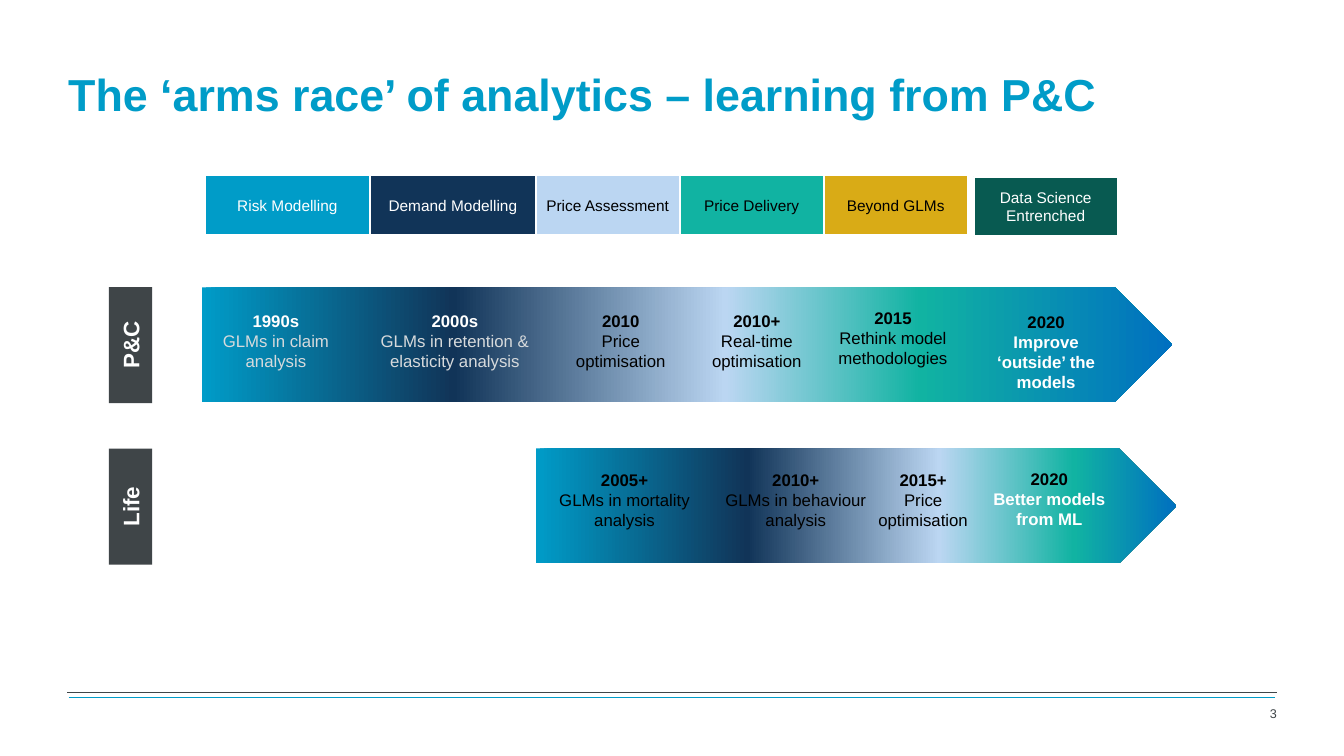
from dataclasses import dataclass

import pptx
import pptx.util
import pptx.dml.color
import pptx.enum.shapes
import pptx.enum.text
import pptx.oxml
import pptx.oxml.ns
from lxml import etree

Cm = pptx.util.Cm
Pt = pptx.util.Pt
RGBColor = pptx.dml.color.RGBColor
Shape = pptx.enum.shapes.MSO_SHAPE
Align = pptx.enum.text.PP_ALIGN
Anchor = pptx.enum.text.MSO_ANCHOR
qn = pptx.oxml.ns.qn

CYAN = RGBColor(0x00, 0x9C, 0xC8)
NAVY = RGBColor(0x11, 0x34, 0x58)
PALE = RGBColor(0xBB, 0xD6, 0xF2)
TEAL = RGBColor(0x11, 0xB3, 0xA2)
GOLD = RGBColor(0xD9, 0xAB, 0x16)
FOREST = RGBColor(0x08, 0x5A, 0x51)
BLUE = RGBColor(0x00, 0x70, 0xC0)
SLATE = RGBColor(0x3F, 0x45, 0x48)
SILVER = RGBColor(0xD7, 0xDA, 0xDC)
WHITE = RGBColor(0xFF, 0xFF, 0xFF)
BLACK = RGBColor(0x00, 0x00, 0x00)

ARROW_COLORS = (CYAN, NAVY, PALE, TEAL, BLUE)
FONT = "Arial"


@dataclass
class Stage:
    text: str
    width: float
    fill: RGBColor
    color: RGBColor
    gap: float = 0
    drop: float = 0


@dataclass
class Milestone:
    year: str
    text: str
    left: float
    top: float
    width: float = 3.91
    year_color: RGBColor = BLACK
    color: RGBColor = BLACK
    bold: bool = False


@dataclass
class Track:
    label: str
    label_top: float
    left: float
    top: float
    width: float
    stops: tuple[int, ...]
    milestones: list[Milestone]


STAGES = [
    Stage("Risk Modelling", 4.17, CYAN, WHITE),
    Stage("Demand Modelling", 4.17, NAVY, WHITE),
    Stage("Price Assessment", 3.63, PALE, BLACK),
    Stage("Price Delivery", 3.63, TEAL, BLACK),
    Stage("Beyond GLMs", 3.63, GOLD, BLACK),
    Stage("Data Science Entrenched", 3.63, FOREST, WHITE, gap=0.15, drop=0.03),
]

TRACKS = [
    Track("P&C", 8.15, 5.08, 7.24, 24.46, (0, 26, 54, 74, 100), [
        Milestone("1990s", "GLMs in claim analysis", 5, 7.7,
                  year_color=WHITE, color=SILVER),
        Milestone("2000s", "GLMs in retention & elasticity analysis", 8.94, 7.7, 5.05,
                  year_color=WHITE, color=SILVER),
        Milestone("2010", "Price\noptimisation", 13.69, 7.7),
        Milestone("2010+", "Real-time\noptimisation", 17.12, 7.7),
        Milestone("2015", "Rethink model methodologies", 20.55, 7.62),
        Milestone("2020", "Improve ‘outside’ the models", 24.41, 7.72,
                  color=WHITE, bold=True),
    ]),
    Track("Life", 12.22, 13.51, 11.3, 16.13, (0, 33, 63, 84, 100), [
        Milestone("2005+", "GLMs in mortality analysis", 13.49, 11.71, 4.5),
        Milestone("2010+", "GLMs in behaviour analysis", 17.53, 11.71, 5.05),
        Milestone("2015+", "Price\noptimisation", 21.51, 11.71, 3.51),
        Milestone("2020", "Better models from ML", 24.49, 11.68,
                  color=WHITE, bold=True),
    ]),
]


def write(p, text: str, size: float, color: RGBColor, bold: bool = False,
          align=Align.CENTER) -> None:
    p.alignment = align
    for i, line in enumerate(text.split("\n")):
        if i:
            p.add_line_break()
        r = p.add_run()
        r.text = line
        r.font.name = FONT
        r.font.size = Pt(size)
        r.font.bold = bold
        r.font.color.rgb = color


def add_box(s, kind, left: float, top: float, width: float, height: float):
    sp = s.shapes.add_shape(kind, Cm(left), Cm(top), Cm(width), Cm(height))
    sp.shadow.inherit = False
    sp.line.fill.background()
    sp.text_frame.vertical_anchor = Anchor.MIDDLE
    sp.text_frame.word_wrap = True
    return sp


def add_text(s, left: float, top: float, width: float, height: float, anchor=Anchor.TOP):
    tf = s.shapes.add_textbox(Cm(left), Cm(top), Cm(width), Cm(height)).text_frame
    tf.word_wrap = True
    tf.vertical_anchor = anchor
    return tf


def add_rule(s, left: float, right: float, y: float, color: RGBColor, weight: float) -> None:
    line = s.shapes.add_connector(pptx.enum.shapes.MSO_CONNECTOR.STRAIGHT,
                                  Cm(left), Cm(y), Cm(right), Cm(y))
    line.line.color.rgb = color
    line.line.width = Pt(weight)
    etree.SubElement(line._element.spPr, qn("a:effectLst"))


def add_stages(s, left: float, top: float) -> None:
    for stage in STAGES:
        left += stage.gap
        sp = add_box(s, Shape.RECTANGLE, left, top + stage.drop, stage.width, 1.5)
        sp.fill.solid()
        sp.fill.fore_color.rgb = stage.fill
        sp.line.color.rgb = WHITE
        sp.line.width = Pt(1.5)
        write(sp.text_frame.paragraphs[0], stage.text, 11, stage.color)
        left += stage.width


def fill_gradient(sp, stops: tuple[int, ...]) -> None:
    sp.fill.gradient()
    sp.fill.gradient_angle = 0
    stop_list = sp._element.spPr.find(qn("a:gradFill")).find(qn("a:gsLst"))
    stop_list.clear()
    for percent, color in zip(stops, ARROW_COLORS):
        stop = etree.SubElement(stop_list, qn("a:gs"), pos=str(percent * 1000))
        etree.SubElement(stop, qn("a:srgbClr"), val=str(color))


def add_track(s, track: Track) -> None:
    label = add_box(s, Shape.RECTANGLE, 1.83, track.label_top, 2.92, 1.09)
    label.rotation = 270
    label.fill.solid()
    label.fill.fore_color.rgb = SLATE
    label.text_frame.word_wrap = False
    write(label.text_frame.paragraphs[0], track.label, 16, WHITE, bold=True)

    arrow = add_box(s, Shape.PENTAGON, track.left, track.top, track.width, 2.9)
    fill_gradient(arrow, track.stops)

    for m in track.milestones:
        tf = add_text(s, m.left, m.top, m.width, 1.8)
        tf.auto_size = pptx.enum.text.MSO_AUTO_SIZE.SHAPE_TO_FIT_TEXT
        write(tf.paragraphs[0], m.year, 12, m.year_color, bold=True)
        write(tf.add_paragraph(), m.text, 12, m.color, m.bold)


def main() -> None:
    prs = pptx.Presentation()
    prs.slide_width, prs.slide_height = Cm(33.87), Cm(19.05)
    s = prs.slides.add_slide(prs.slide_layouts[6])

    # Footer rules and slide number
    add_rule(s, 1.73, 32.13, 17.58, CYAN, 1)
    add_rule(s, 1.7, 32.18, 17.45, SLATE, 0.25)
    tf = add_text(s, 30.76, 17.78, 1.42, 0.38, Anchor.BOTTOM)
    tf.margin_left = tf.margin_right = tf.margin_top = tf.margin_bottom = 0
    write(tf.paragraphs[0], "3", 9, SLATE, align=Align.RIGHT)

    # Title
    tf = add_text(s, 1.47, 0.76, 30.71, 3.18, Anchor.MIDDLE)
    write(tf.paragraphs[0], "The ‘arms race’ of analytics – learning from P&C",
          32, CYAN, bold=True, align=Align.LEFT)

    # Stage headings and timelines
    add_stages(s, 5.16, 4.42)
    for track in TRACKS:
        add_track(s, track)

    prs.save("out.pptx")


if __name__ == "__main__":
    main()
